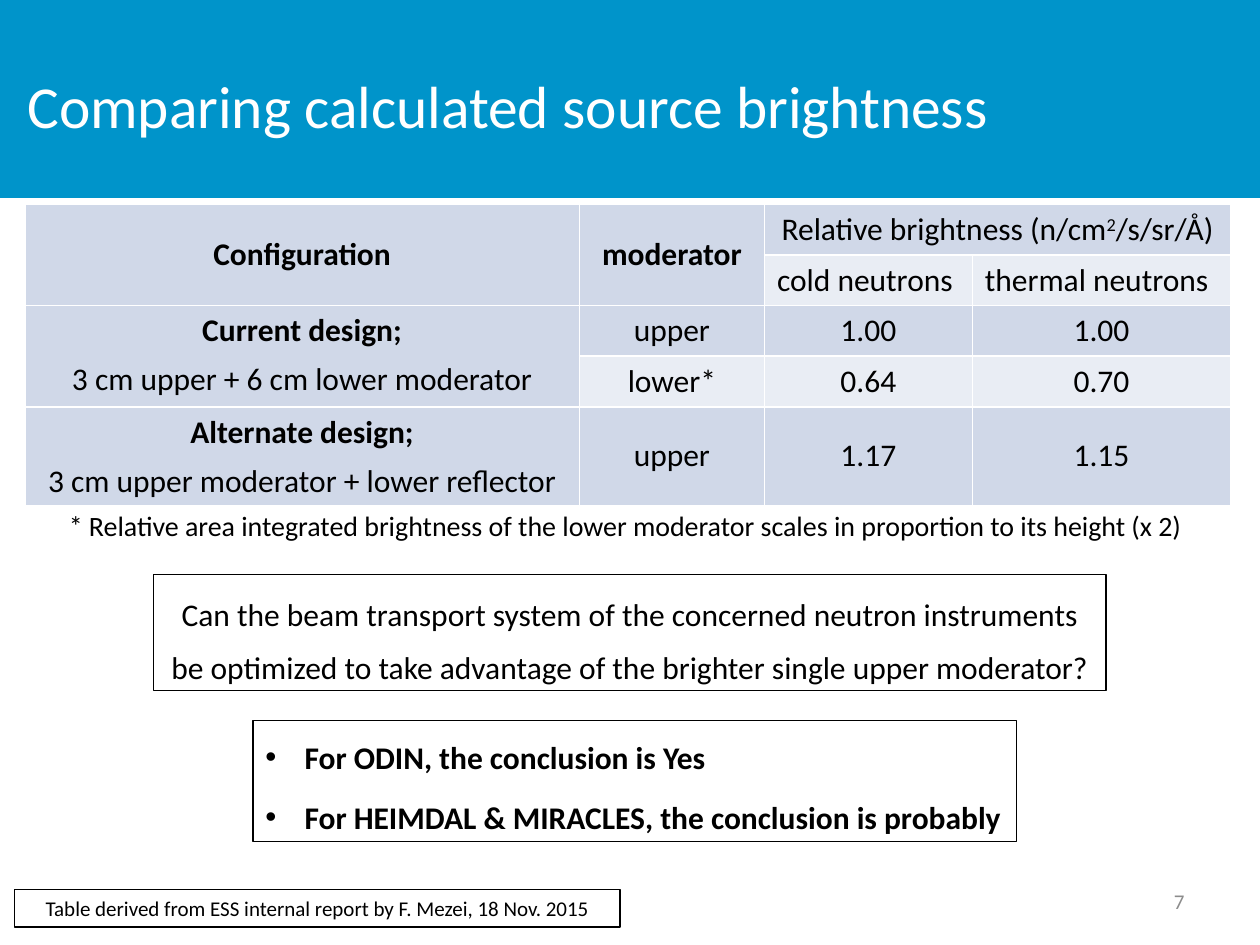
from pptx import Presentation
from pptx.dml.color import RGBColor
from pptx.enum.shapes import MSO_SHAPE
from pptx.enum.text import MSO_ANCHOR, MSO_AUTO_SIZE, PP_ALIGN
from pptx.oxml.xmlchemy import OxmlElement
from pptx.util import Cm, Pt


def color(hex_code):
    return RGBColor.from_string(hex_code)


class SlideBuilder:
    FONT = "Calibri"
    INK, WHITE, GREY = "000000", "FFFFFF", "8C8C8C"
    BAND, DARK_ROW, LIGHT_ROW = "0094CA", "D0D8E8", "E9EDF4"

    def __init__(self, slide):
        self.slide = slide

    def place(self, part, box):
        part.left, part.top, part.width, part.height = map(Cm, box)

    def set_text(self, frame, lines, size=18, hue=INK, bold=False,
                 align=PP_ALIGN.CENTER, anchor=MSO_ANCHOR.TOP, bullet=False,
                 leading=None, before=0, after=0):
        frame.word_wrap = True
        frame.vertical_anchor = anchor
        for index, line in enumerate(lines):
            paragraph = frame.paragraphs[0] if index == 0 else frame.add_paragraph()
            paragraph.text = line
            paragraph.alignment = align
            if leading:
                paragraph.line_spacing = Pt(leading)
            if before and index:
                paragraph.space_before = Pt(before)
            if after:
                paragraph.space_after = Pt(after)
            if bullet:
                self.add_bullet(paragraph)
            self.style(paragraph.font, size, hue, bold)

    def style(self, font, size, hue, bold):
        font.name, font.size, font.bold = self.FONT, Pt(size), bold
        font.color.rgb = color(hue)

    def add_bullet(self, paragraph):
        properties = paragraph._p.get_or_add_pPr()
        properties.set("marL", str(Cm(0.79)))
        properties.set("indent", str(-Cm(0.79)))
        bullet_font = OxmlElement("a:buFont")
        bullet_font.set("typeface", "Arial")
        bullet = OxmlElement("a:buChar")
        bullet.set("char", "•")
        properties.extend([bullet_font, bullet])

    def band(self, box):
        band = self.slide.shapes.add_shape(MSO_SHAPE.RECTANGLE, *map(Cm, box))
        band.shadow.inherit = False
        band.fill.solid()
        band.fill.fore_color.rgb = color(self.BAND)
        band.line.fill.background()
        self.slide.shapes._spTree.insert(2, band._element)

    def title(self, box, text):
        title = self.slide.shapes.title
        self.place(title, box)
        title.text_frame.auto_size = MSO_AUTO_SIZE.NONE
        self.set_text(title.text_frame, [text], 34, self.WHITE,
                      align=PP_ALIGN.LEFT, anchor=MSO_ANCHOR.MIDDLE)

    def text(self, box, lines, framed=False, **options):
        note = self.slide.shapes.add_textbox(*map(Cm, box))
        if framed:
            note.line.color.rgb = color(self.INK)
            note.line.width = Pt(0.75)
        self.set_text(note.text_frame, lines, **options)

    def table(self, box, widths, heights, rows, merges):
        frame = self.slide.shapes.add_table(len(heights), len(widths), *map(Cm, box))
        table = frame.table
        table.first_row = table.horz_banding = False
        for column, width in zip(table.columns, widths):
            column.width = Cm(width)
        for row, height in zip(table.rows, heights):
            row.height = Cm(height)
        for row_index, row in enumerate(rows):
            for column_index, text in enumerate(row):
                cell = table.cell(row_index, column_index)
                cell.fill.solid()
                cell.fill.fore_color.rgb = color(
                    self.LIGHT_ROW if row_index % 2 else self.DARK_ROW)
                if text:
                    self.fill_cell(cell, text, row_index, column_index)
        for start, end in merges:
            table.cell(*start).merge(table.cell(*end))
        return table

    def fill_cell(self, cell, text, row, column):
        heading = row == 0 and column < 2
        design = row > 1 and column == 0
        subheading = row < 2 and column > 1
        self.set_text(
            cell.text_frame, text.split("\n"), bold=heading, before=6,
            align=PP_ALIGN.LEFT if row == 1 else PP_ALIGN.CENTER)
        cell.vertical_anchor = (
            MSO_ANCHOR.TOP if design or subheading else MSO_ANCHOR.MIDDLE)
        if design:
            cell.text_frame.paragraphs[0].font.bold = True

    def superscript(self, cell, raised, after):
        paragraph = cell.text_frame.paragraphs[0]
        exponent = paragraph.add_run()
        exponent.text = raised
        exponent.font._element.set("baseline", "30000")
        paragraph.add_run().text = after


def main():
    presentation = Presentation()
    presentation.slide_width, presentation.slide_height = Cm(25.4), Cm(19.05)
    builder = SlideBuilder(
        presentation.slides.add_slide(presentation.slide_layouts[5]))

    builder.band((0, 0, 25.4, 3.99))
    builder.title((0.3, 0.53, 20.2, 3.18), "Comparing calculated source brightness")
    builder.text((18.21, 17.65, 5.92, 1.02), ["7"], size=12, hue=builder.GREY,
                 align=PP_ALIGN.RIGHT, anchor=MSO_ANCHOR.MIDDLE)
    builder.text((0.3, 17.93, 12.2, 0.76),
                 ["Table derived from ESS internal report by F. Mezei, 18 Nov. 2015"],
                 framed=True, size=12)

    rows = [
        ["Configuration", "moderator", "Relative brightness (n/cm", ""],
        ["", "", "cold neutrons", "thermal neutrons"],
        ["Current design;\n3 cm upper + 6 cm lower moderator", "upper", "1.00", "1.00"],
        ["", "lower*", "0.64", "0.70"],
        ["Alternate design;\n3 cm upper moderator + lower reflector",
         "upper", "1.17", "1.15"],
    ]
    merges = [((0, 0), (1, 0)), ((0, 1), (1, 1)), ((0, 2), (0, 3)), ((2, 0), (3, 0))]
    brightness = builder.table(
        (0.5, 4.12, 24.31, 6.05), [11.18, 3.73, 4.19, 5.21],
        [1.02] * 4 + [1.97], rows, merges)
    builder.superscript(brightness.cell(0, 2), "2", "/s/sr/Å)")

    builder.text((0.71, 10.13, 23.8, 1.19),
                 ["* Relative area integrated brightness of the lower moderator "
                  "scales in proportion to its height (x 2)"], size=16)
    builder.text((3.1, 11.58, 19.2, 2.34),
                 ["Can the beam transport system of the concerned neutron instruments "
                  "be optimized to take advantage of the brighter single upper moderator?"],
                 framed=True, leading=30, after=6)
    builder.text((5.1, 14.53, 15.4, 2.44),
                 ["For ODIN, the conclusion is Yes",
                  "For HEIMDAL & MIRACLES, the conclusion is probably"],
                 framed=True, bold=True, align=PP_ALIGN.LEFT, bullet=True,
                 leading=28, before=6)

    presentation.save("out.pptx")


if __name__ == "__main__":
    main()
